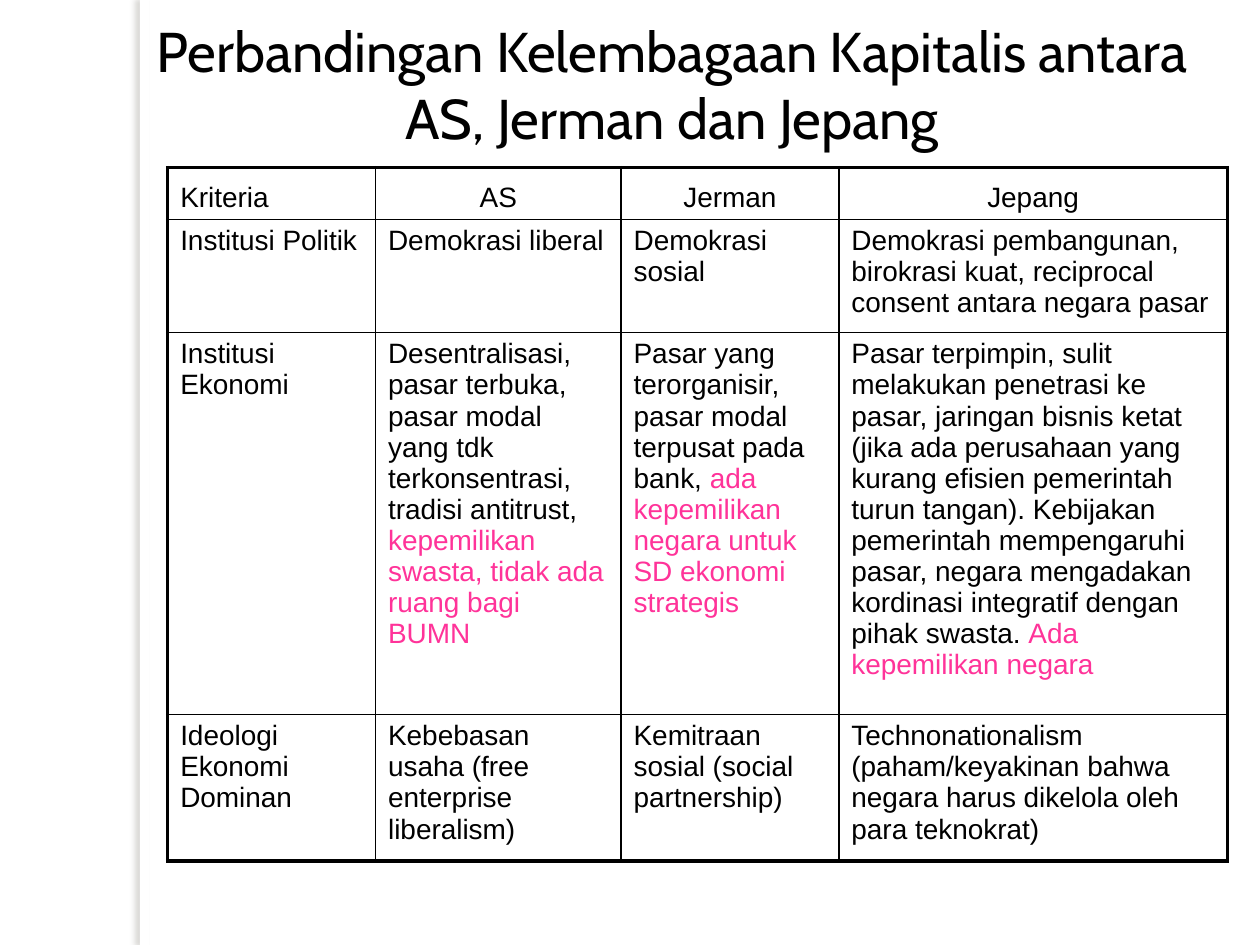
from lxml.etree import SubElement
from pptx import Presentation
from pptx.dml.color import RGBColor
from pptx.enum.shapes import MSO_SHAPE
from pptx.enum.text import MSO_ANCHOR, MSO_AUTO_SIZE, PP_ALIGN
from pptx.oxml.ns import qn
from pptx.util import Cm, Pt

THEME = {
    "black": "000000", "pink": "FF3399", "white": "FFFFFF", "shadow": "736F63",
    "title": {"name": "Cabin", "size": Pt(32), "bold": False},
    "cell": {"name": "Arial", "size": Pt(16), "bold": False},
    "outer": Pt(2.25), "inner": Pt(1),
}


def add_run(p, text, style, color):
    r = p.add_run()
    r.text = text
    for name, value in THEME[style].items():
        setattr(r.font, name, value)
    r.font.color.rgb = RGBColor.from_string(THEME[color])


def add_border(cell, side, width):
    ln = SubElement(cell._tc.get_or_add_tcPr(), qn(f"a:ln{side}"), w=str(width))
    fill = SubElement(ln, qn("a:solidFill"))
    SubElement(fill, qn("a:srgbClr"), val=THEME["black"])


prs = Presentation()
prs.slide_width, prs.slide_height = Cm(25.4), Cm(19.05)
s = prs.slides.add_slide(prs.slide_layouts[5])

# Vertical strip with a soft shadow to its left
strip = s.shapes.add_shape(MSO_SHAPE.RECTANGLE, Cm(2.82), 0, Cm(0.2), prs.slide_height)
strip.fill.solid()
strip.fill.fore_color.rgb = RGBColor.from_string(THEME["white"])
strip.line.fill.background()
strip.shadow.inherit = False
effects = strip._element.spPr.find(qn("a:effectLst"))
shadow = SubElement(effects, qn("a:outerShdw"), blurRad=str(Pt(3)), dist=str(Pt(3)),
                    dir="10800000", algn="tl", rotWithShape="0")
color = SubElement(shadow, qn("a:srgbClr"), val=THEME["shadow"])
SubElement(color, qn("a:alpha"), val="25000")

# Title
title = s.shapes.title
box = {"left": Cm(2.54), "top": Cm(0.2), "width": Cm(22.02), "height": Cm(3)}
for name, value in box.items():
    setattr(title, name, value)
tf = title.text_frame
frame = {"word_wrap": True, "auto_size": MSO_AUTO_SIZE.NONE,
         "vertical_anchor": MSO_ANCHOR.TOP}
for name, value in frame.items():
    setattr(tf, name, value)
p = tf.paragraphs[0]
p.alignment = PP_ALIGN.CENTER
add_run(p, "Perbandingan Kelembagaan Kapitalis antara AS, Jerman dan Jepang",
        "title", "black")

# Table content: a pair holds plain text and its highlighted ending
ROWS = [
    ["Kriteria", "AS", "Jerman", "Jepang"],
    ["Institusi Politik", "Demokrasi liberal", "Demokrasi sosial",
     "Demokrasi pembangunan, birokrasi kuat, reciprocal consent antara negara pasar"],
    ["Institusi Ekonomi",
     ("Desentralisasi, pasar terbuka, pasar modal yang tdk terkonsentrasi, "
      "tradisi antitrust, ",
      "kepemilikan swasta, tidak ada ruang bagi BUMN"),
     ("Pasar yang terorganisir, pasar modal terpusat pada bank, ",
      "ada kepemilikan negara untuk SD ekonomi strategis"),
     ("Pasar terpimpin, sulit melakukan penetrasi ke pasar, jaringan bisnis ketat "
      "(jika ada perusahaan yang kurang efisien pemerintah turun tangan). Kebijakan "
      "pemerintah mempengaruhi pasar, negara mengadakan kordinasi integratif dengan "
      "pihak swasta. ",
      "Ada kepemilikan negara")],
    ["Ideologi Ekonomi Dominan", "Kebebasan usaha (free enterprise liberalism)",
     "Kemitraan sosial (social partnership)",
     "Technonationalism (paham/keyakinan bahwa negara harus dikelola oleh "
     "para teknokrat)"],
]
COL_WIDTHS = [4.19, 4.95, 4.39, 7.83]
ROW_HEIGHTS = [1.04, 2.28, 7.7, 2.96]

# Table grid
table = s.shapes.add_table(len(ROWS), len(COL_WIDTHS), Cm(3.38), Cm(3.38),
                           Cm(sum(COL_WIDTHS)), Cm(sum(ROW_HEIGHTS))).table
table.first_row = table.horz_banding = False
for column, width in zip(table.columns, COL_WIDTHS):
    column.width = Cm(width)
for row, height in zip(table.rows, ROW_HEIGHTS):
    row.height = Cm(height)

# Cells: heavy line around the table, thin lines inside
last_row, last_col = len(ROWS) - 1, len(COL_WIDTHS) - 1
for i, row in enumerate(ROWS):
    for j, content in enumerate(row):
        cell = table.cell(i, j)
        edges = {"L": j == 0, "R": j == last_col, "T": i == 0, "B": i == last_row}
        for side, is_outer in edges.items():
            add_border(cell, side, THEME["outer" if is_outer else "inner"])
        cell.fill.background()
        cell.vertical_anchor = MSO_ANCHOR.BOTTOM if i == 0 else MSO_ANCHOR.TOP
        p = cell.text_frame.paragraphs[0]
        p.alignment = PP_ALIGN.CENTER if i == 0 and j > 0 else PP_ALIGN.LEFT
        parts = (content,) if isinstance(content, str) else content
        for text, color in zip(parts, ("black", "pink")):
            add_run(p, text, "cell", color)

prs.save("out.pptx")
